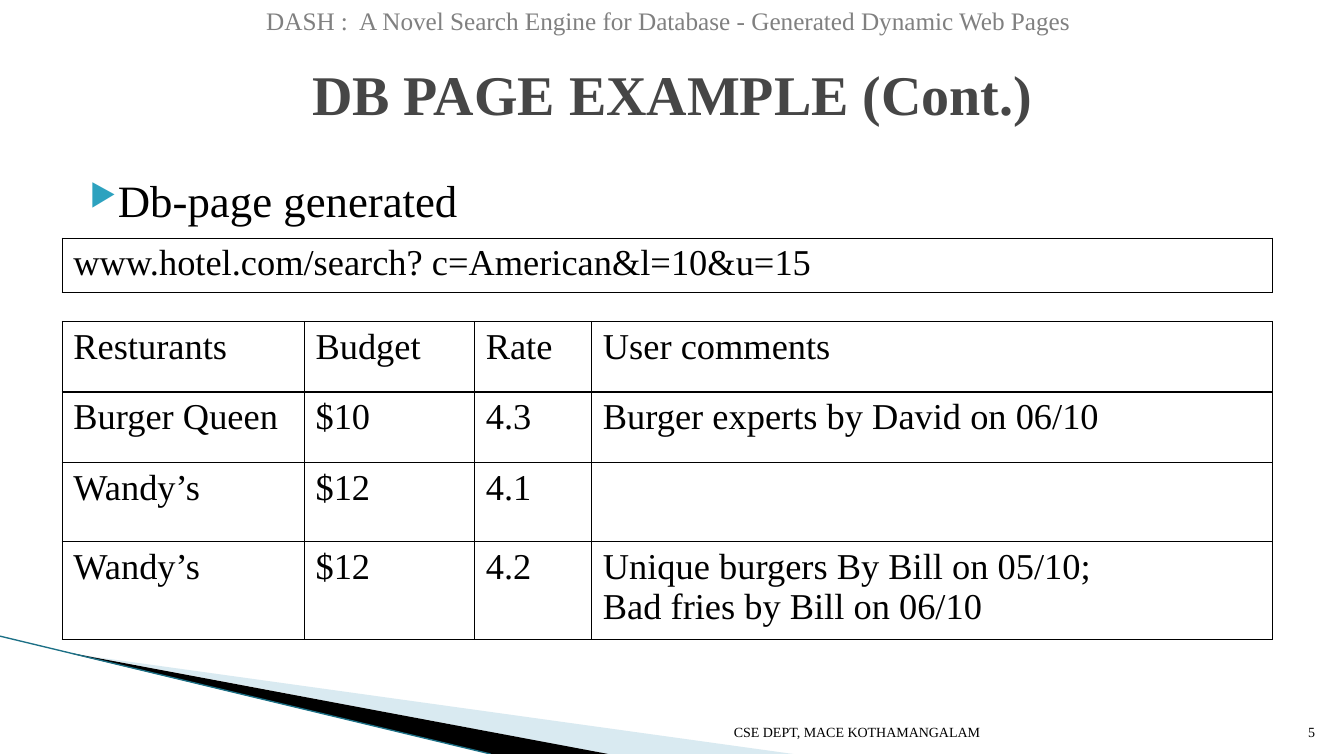
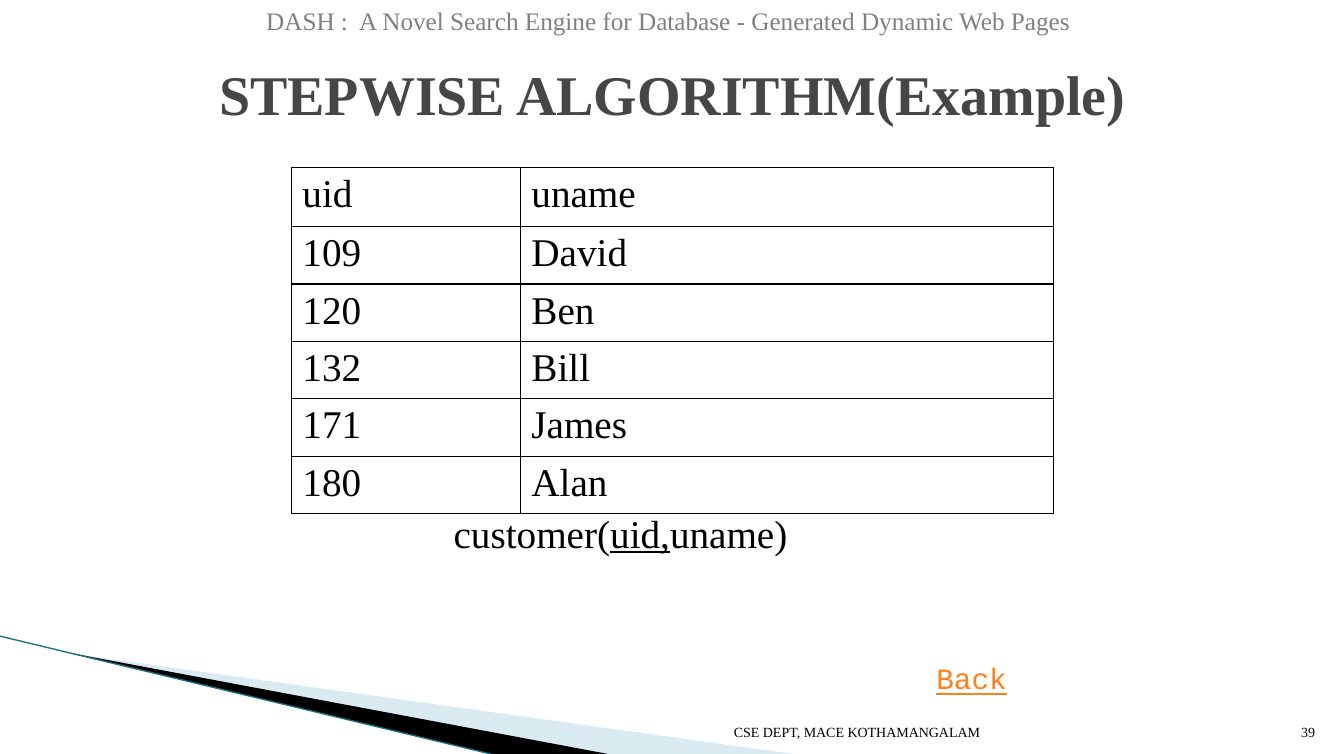
import pptx
import pptx.dml.color
import pptx.enum.shapes
import pptx.enum.text
import pptx.oxml
import pptx.oxml.ns
import pptx.util
from lxml import etree

Cm = pptx.util.Cm
Pt = pptx.util.Pt
ALIGN = pptx.enum.text.PP_ALIGN
ANCHOR = pptx.enum.text.MSO_ANCHOR


def color(value):
    return pptx.dml.color.RGBColor.from_string(value)


def child(parent, tag, **attributes):
    return etree.SubElement(parent, pptx.oxml.ns.qn(tag), attributes)


class Deck:
    """Builds slides that share one title style, corner wedge, header and footer."""

    SERIF = "Times New Roman"
    BLACK, WHITE, GRAY, TITLE = "000000", "FFFFFF", "808080", "464646"
    TEAL, PALE, EDGE, ORANGE = "2DA2BF", "A0CBDC", "1C7086", "FF8119"
    HEADER = "DASH :  A Novel Search Engine for Database - Generated Dynamic Web Pages"
    FOOTER = "CSE DEPT, MACE KOTHAMANGALAM"
    WIDTH, HEIGHT = 33.86, 19

    def __init__(self):
        self.presentation = pptx.Presentation()
        self.presentation.slide_width = Cm(self.WIDTH)
        self.presentation.slide_height = Cm(self.HEIGHT)
        self.slide = None

    def add_slide(self, title, number):
        self.slide = self.presentation.slides.add_slide(self.presentation.slide_layouts[5])
        self.wedge([(1.85, 16.48), (19.98, 19), (15.3, 19), (1.85, 16.46)], self.PALE, 40)
        self.wedge([(1.8, 16.46), (15.32, 19), (12.36, 19), (1.83, 16.48)], self.BLACK)
        self.line((0, 16.03), (12.36, 19))
        self.title(title)
        self.text(6.35, 0, 20.98, 1.02, [self.HEADER], 18, self.GRAY, align=ALIGN.CENTER, wrap=False)
        for left, width, label in ((16.23, 8.71, self.FOOTER), (32.03, 1.35, str(number))):
            self.text(left, 17.75, width, 1.02, [label], 10, align=ALIGN.RIGHT, anchor=ANCHOR.BOTTOM)

    def style(self, paragraph, size, value=BLACK, name=SERIF, bold=False):
        font = paragraph.font
        font.size, font.name, font.bold = Pt(size), name, bold
        font.color.rgb = color(value)

    def title(self, text):
        shape = self.slide.shapes.title
        shape.left, shape.top, shape.width, shape.height = Cm(1.7), Cm(0.76), Cm(30.48), Cm(3.18)
        shape.text_frame.text = text
        shape.text_frame.vertical_anchor = ANCHOR.MIDDLE
        paragraph = shape.text_frame.paragraphs[0]
        paragraph.alignment = ALIGN.CENTER
        self.style(paragraph, 40, self.TITLE, bold=True)

    def text(self, left, top, width, height, runs, size, value=BLACK, name=SERIF,
             align=ALIGN.LEFT, anchor=ANCHOR.TOP, wrap=True, underlined=(), bullet=False):
        shape = self.slide.shapes.add_textbox(Cm(left), Cm(top), Cm(width), Cm(height))
        frame = shape.text_frame
        frame.word_wrap = wrap
        frame.vertical_anchor = anchor
        paragraph = frame.paragraphs[0]
        paragraph.alignment = align
        if bullet:
            self.bullet(paragraph)
        self.style(paragraph, size, value, name)
        for content in runs:
            run = paragraph.add_run()
            run.text = content
            if content in underlined:
                run.font.underline = True

    def bullet(self, paragraph):
        properties = paragraph._p.get_or_add_pPr()
        properties.set("marL", str(Cm(1.02)))
        properties.set("indent", str(Cm(-0.71)))
        child(child(properties, "a:buClr"), "a:srgbClr", val=self.TEAL)
        child(properties, "a:buSzPct", val="68000")
        child(properties, "a:buChar", char="▶")

    def wedge(self, points, value, opacity=100):
        corners = [(Cm(x), Cm(y)) for x, y in points]
        builder = self.slide.shapes.build_freeform(*corners[0], scale=1.0)
        builder.add_line_segments(corners[1:], close=True)
        shape = builder.convert_to_shape()
        shape.shadow.inherit = False
        shape.fill.solid()
        shape.fill.fore_color.rgb = color(value)
        shape.line.fill.background()
        if opacity < 100:
            fill = shape._element.spPr.find(".//" + pptx.oxml.ns.qn("a:srgbClr"))
            child(fill, "a:alpha", val=str(opacity * 1000))

    def line(self, start, end):
        connector = self.slide.shapes.add_connector(
            pptx.enum.shapes.MSO_CONNECTOR.STRAIGHT, *(Cm(value) for value in start + end))
        connector.line.color.rgb = color(self.EDGE)
        connector.line.width = Pt(0.95)
        child(connector._element.spPr, "a:effectLst")

    def table(self, left, top, widths, heights, rows, size):
        table = self.slide.shapes.add_table(
            len(rows), len(widths), Cm(left), Cm(top), Cm(sum(widths)), Cm(sum(heights))).table
        table.first_row = table.horz_banding = False
        for column, width in zip(table.columns, widths):
            column.width = Cm(width)
        for row, height, values in zip(table.rows, heights, rows):
            row.height = Cm(height)
            for cell, value in zip(row.cells, values):
                self.cell(cell, value, size)

    def cell(self, cell, value, size):
        cell.text = value
        cell.margin_left = cell.margin_right = Cm(0.28)
        cell.margin_top = cell.margin_bottom = Cm(0.13)
        for paragraph in cell.text_frame.paragraphs:
            self.style(paragraph, size)
        properties = cell._tc.get_or_add_tcPr()
        for side in "LRTB":
            border = child(properties, "a:ln" + side, w=str(Pt(1)))
            child(child(border, "a:solidFill"), "a:srgbClr", val=self.BLACK)
        cell.fill.solid()
        cell.fill.fore_color.rgb = color(self.WHITE)


def main():
    deck = Deck()

    deck.add_slide("DB PAGE EXAMPLE (Cont.)", 5)
    deck.text(1.7, 4.23, 30.48, 1.6, ["Db-page generated"], 32, bullet=True)
    deck.table(1.57, 8.1, [6.1, 4.29, 2.95, 17.15], [1.78, 1.78, 1.99, 2.45], [
        ["Resturants", "Budget", "Rate", "User comments"],
        ["Burger Queen", "$10", "4.3", "Burger experts by David on 06/10"],
        ["Wandy’s", "$12", "4.1", ""],
        ["Wandy’s", "$12", "4.2", "Unique burgers By Bill on 05/10;\nBad fries by Bill on 06/10"],
    ], 26)
    deck.table(1.57, 6, [30.49], [1.35], [["www.hotel.com/search? c=American&l=10&u=15"]], 26)

    deck.add_slide("STEPWISE ALGORITHM(Example)", 39)
    customers = [["uid", "uname"], ["109", "David"], ["120", "Ben"],
                 ["132", "Bill"], ["171", "James"], ["180", "Alan"]]
    deck.table(7.34, 4.22, [5.77, 13.43], [1.49] + [1.44] * 5, customers, 28)
    deck.text(11.18, 12.7, 19.76, 1.45, ["customer(", "uid,", "uname)"], 28, underlined=["uid,"])
    deck.text(23.34, 16.51, 8.2, 1.14, ["Back"], 21, deck.ORANGE, "Courier New", underlined=["Back"])

    deck.presentation.save("out.pptx")


if __name__ == "__main__":
    main()
